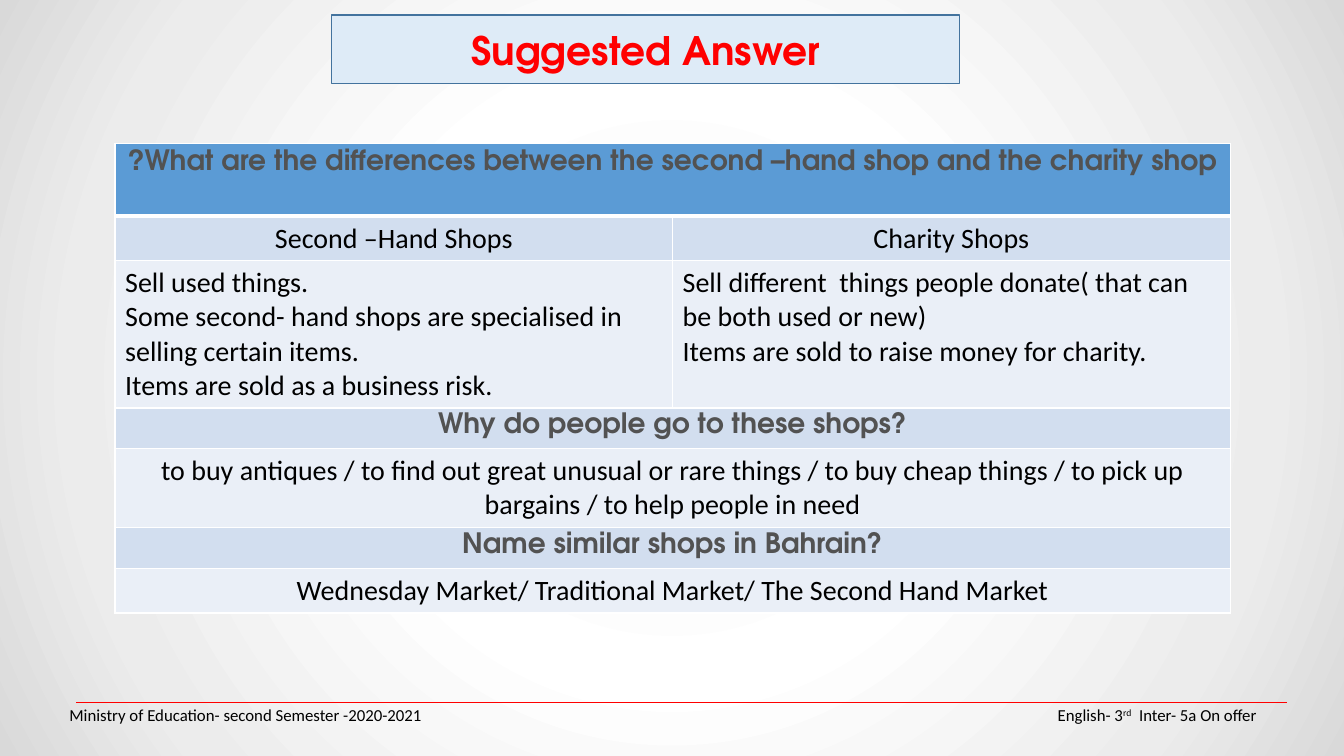
from dataclasses import dataclass

from pptx import Presentation
from pptx.dml.color import RGBColor
from pptx.enum.shapes import MSO_CONNECTOR
from pptx.enum.text import MSO_ANCHOR, PP_ALIGN
from pptx.oxml import parse_xml
from pptx.oxml.ns import nsdecls, qn
from pptx.util import Cm, Pt

COLORS = {
    "red": "FF0000", "black": "000000", "grey": "525252", "white": "FFFFFF",
    "title_fill": "DEEBF7", "title_line": "43739E",
    "header": "5B9BD5", "band": "D2DEEF", "light": "EAEFF7",
}
BACKGROUND = [(0, "F2F2F2"), (39, "FFFFFF"), (78, "ECECEC"), (100, "D9D9D9")]
HEADING_FONT = "TeX Gyre Adventor"
BODY_FONT = "Calibri"


@dataclass
class AnswerRow:
    height: float
    fill: str
    texts: list[str]
    heading: bool = False
    centered: bool = True
    rtl: bool = False
    bottom: int = 1


ROWS = [
    AnswerRow(1.84, "header",
              ["What are the differences between the second –hand shop and the charity shop?"],
              heading=True, rtl=True, bottom=3),
    AnswerRow(1.11, "band", ["Second –Hand Shops", "Charity Shops"]),
    AnswerRow(3.7, "light", [
        "Sell used things.\n"
        "Some second- hand shops are specialised in selling certain items.\n"
        "Items are sold as a business risk.",
        "Sell different  things people donate( that can be both used or new)\n"
        "Items are sold to raise money for charity.",
    ], centered=False),
    AnswerRow(1.03, "band", ["Why do people go to these shops?"], heading=True),
    AnswerRow(1.99, "light", [
        "to buy antiques / to find out great unusual or rare things / to buy cheap things"
        " / to pick up bargains / to help people in need"]),
    AnswerRow(1.03, "band", ["Name similar shops in Bahrain?"], heading=True),
    AnswerRow(1.11, "light", ["Wednesday Market/ Traditional Market/ The Second Hand Market"]),
]


def rgb(name: str) -> RGBColor:
    return RGBColor.from_string(COLORS[name])


def format_run(r, font: str, size: float, color: str, bold: bool = False) -> None:
    r.font.name = font
    r.font.size = Pt(size)
    r.font.bold = bold
    r.font.color.rgb = rgb(color)


def set_background(s) -> None:
    s.background.fill.gradient()
    grad = s.element.find(".//" + qn("a:gradFill"))
    stops = "".join(f'<a:gs pos="{pos * 1000}"><a:srgbClr val="{color}"/></a:gs>'
                    for pos, color in BACKGROUND)
    grad.getparent().replace(grad, parse_xml(
        f'<a:gradFill {nsdecls("a")} rotWithShape="1"><a:gsLst>{stops}</a:gsLst>'
        '<a:path path="circle"><a:fillToRect l="50000" t="50000" r="50000" b="50000"/></a:path>'
        '</a:gradFill>'))


def add_title(s) -> None:
    sp = s.shapes.title
    sp.left, sp.top, sp.width, sp.height = Cm(8.36), Cm(0.38), Cm(15.82), Cm(1.73)
    sp.fill.solid()
    sp.fill.fore_color.rgb = rgb("title_fill")
    sp.line.color.rgb = rgb("title_line")
    sp.line.width = Pt(1)
    tf = sp.text_frame
    tf.text = "Suggested Answer"
    tf.vertical_anchor = MSO_ANCHOR.MIDDLE
    p = tf.paragraphs[0]
    p.alignment = PP_ALIGN.CENTER
    format_run(p.runs[0], HEADING_FONT, 28, "red", True)


def style_cell(cell, row: AnswerRow) -> None:
    tcPr = cell._tc.get_or_add_tcPr()
    for side in "LRTB":
        width = Pt(row.bottom if side == "B" else 1)
        tcPr.append(parse_xml(
            f'<a:ln{side} {nsdecls("a")} w="{width}"><a:solidFill>'
            f'<a:srgbClr val="{COLORS["white"]}"/></a:solidFill></a:ln{side}>'))
    cell.fill.solid()
    cell.fill.fore_color.rgb = rgb(row.fill)


def fill_cell(cell, text: str, row: AnswerRow) -> None:
    cell.text_frame.text = text
    if row.heading:
        cell.margin_left = cell.margin_right = Cm(0.17)
    for p in cell.text_frame.paragraphs:
        p.alignment = PP_ALIGN.CENTER if row.centered else PP_ALIGN.LEFT
        if row.rtl:
            p._p.get_or_add_pPr().set("rtl", "1")
        for r in p.runs:
            if row.heading:
                format_run(r, HEADING_FONT, 20, "grey", True)
            else:
                format_run(r, BODY_FONT, 20, "black")


def add_answers(s) -> None:
    height = sum(row.height for row in ROWS)
    table = s.shapes.add_table(len(ROWS), 2, Cm(2.9), Cm(3.61), Cm(28.1), Cm(height)).table
    for i, row in enumerate(ROWS):
        table.rows[i].height = Cm(row.height)
        if len(row.texts) == 1:
            table.cell(i, 0).merge(table.cell(i, 1))
        for j in range(2):
            style_cell(table.cell(i, j), row)
        for j, text in enumerate(row.texts):
            fill_cell(table.cell(i, j), text, row)


def add_footer(s) -> None:
    line = s.shapes.add_connector(MSO_CONNECTOR.STRAIGHT, Cm(1.92), Cm(17.7), Cm(32.43), Cm(17.7))
    line.line.color.rgb = rgb("red")
    line.line.width = Pt(0.75)
    line._element.spPr.append(parse_xml(f'<a:effectLst {nsdecls("a")}/>'))
    tf = s.shapes.add_textbox(Cm(1.5), Cm(17.63), Cm(31.42), Cm(0.75)).text_frame
    tf.word_wrap = True
    p = tf.paragraphs[0]
    p.text = "Ministry of Education- second Semester -2020-2021\tEnglish- 3"
    p._p.get_or_add_pPr().append(parse_xml(
        f'<a:tabLst {nsdecls("a")}><a:tab pos="{Cm(29.92)}" algn="r"/></a:tabLst>'))
    ordinal = p.add_run()
    ordinal.text = "rd"
    p.add_run().text = "  Inter- 5a On offer"
    for r in p.runs:
        format_run(r, BODY_FONT, 12, "black")
    ordinal.font._element.set("baseline", "30000")


def main() -> None:
    prs = Presentation()
    prs.slide_width, prs.slide_height = Cm(33.87), Cm(19.05)
    s = prs.slides.add_slide(prs.slide_layouts[5])
    set_background(s)
    add_title(s)
    add_answers(s)
    add_footer(s)
    prs.save("out.pptx")


if __name__ == "__main__":
    main()
